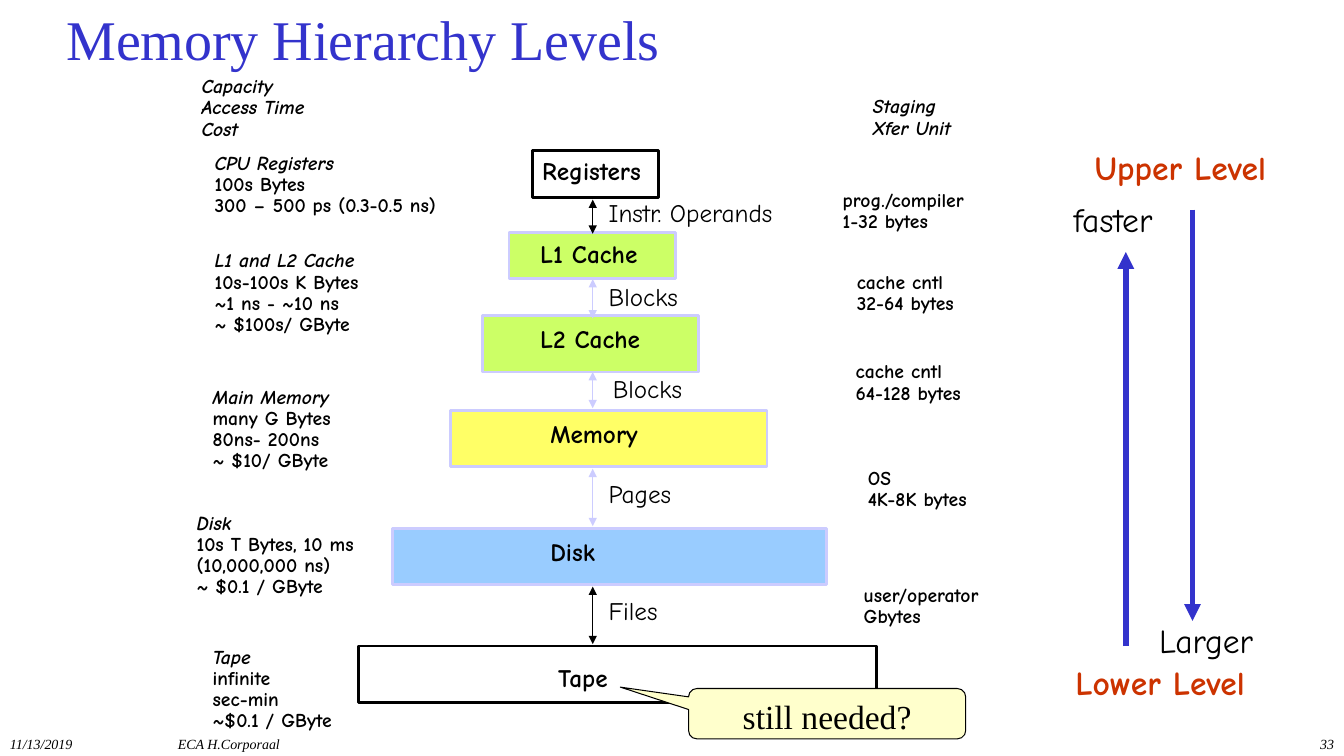
import pptx
import pptx.util
import pptx.dml.color
import pptx.enum.shapes
import pptx.enum.text
import pptx.oxml.ns
from lxml import etree

Pt = pptx.util.Pt
RGBColor = pptx.dml.color.RGBColor
Shape = pptx.enum.shapes.MSO_SHAPE
Align = pptx.enum.text.PP_ALIGN
Anchor = pptx.enum.text.MSO_ANCHOR
qn = pptx.oxml.ns.qn

BLACK = RGBColor(0x00, 0x00, 0x00)
BLUE = RGBColor(0x33, 0x33, 0xCC)
RED = RGBColor(0xCC, 0x33, 0x00)
LAVENDER = RGBColor(0xCC, 0xCC, 0xFF)
GREEN = RGBColor(0xCC, 0xFF, 0x66)
YELLOW = RGBColor(0xFF, 0xFF, 0x66)
SKY = RGBColor(0x99, 0xCC, 0xFF)
CREAM = RGBColor(0xFF, 0xFF, 0xCC)


class HierarchySlide:
    serif = "Times New Roman"
    comic = "Comic Neue"

    def __init__(self, deck):
        self.page = deck.slides.add_slide(deck.slide_layouts[6])

    def style(self, span, size, font, color, bold=False, italic=False):
        span.font.size = Pt(size)
        span.font.name = font
        span.font.color.rgb = color
        span.font.bold = bold
        span.font.italic = italic

    def serif_text(self, text, left, top, width, height, size, color=BLACK,
                   italic=False, align=Align.LEFT, anchor=Anchor.TOP):
        box = self.page.shapes.add_textbox(Pt(left), Pt(top), Pt(width), Pt(height))
        frame = box.text_frame
        frame.word_wrap = True
        frame.vertical_anchor = anchor
        para = frame.paragraphs[0]
        para.alignment = align
        span = para.add_run()
        span.text = text
        self.style(span, size, self.serif, color, italic=italic)

    def note(self, lines, left, top, width, size=14, color=BLACK, bold=True,
             italic_lines=0, spacing=0.9):
        height = 5 + len(lines) * size * 1.05
        box = self.page.shapes.add_textbox(Pt(left), Pt(top), Pt(width), Pt(height))
        frame = box.text_frame
        frame.word_wrap = False
        frame.margin_left = frame.margin_right = Pt(5)
        frame.margin_top = frame.margin_bottom = Pt(2.2)
        for index, line in enumerate(lines):
            para = frame.paragraphs[0] if index == 0 else frame.add_paragraph()
            para.line_spacing = spacing
            for part_index, part in enumerate(line.split("\n")):
                if part_index:
                    para.add_line_break()
                span = para.add_run()
                span.text = part
                self.style(span, size, self.comic, color, bold, index < italic_lines)

    def label(self, text, left, top, width, size=18, color=BLACK, bold=False):
        self.note([text], left, top, width, size, color, bold, spacing=0.85)

    def block(self, left, top, width, height, fill, line, weight=2, kind=Shape.RECTANGLE):
        block = self.page.shapes.add_shape(kind, Pt(left), Pt(top), Pt(width), Pt(height))
        block.shadow.inherit = False
        if fill is None:
            block.fill.background()
        else:
            block.fill.solid()
            block.fill.fore_color.rgb = fill
        block.line.color.rgb = line
        block.line.width = Pt(weight)
        return block

    def callout(self, text, left, top, width, height, adjustments):
        bubble = self.block(left, top, width, height, CREAM, BLACK, 0.75,
                            Shape.ROUNDED_RECTANGULAR_CALLOUT)
        for index, value in enumerate(adjustments):
            bubble.adjustments[index] = value
        bubble.text_frame.vertical_anchor = Anchor.TOP
        para = bubble.text_frame.paragraphs[0]
        para.alignment = Align.CENTER
        span = para.add_run()
        span.text = text
        self.style(span, 24, self.serif, BLACK)

    def arrow(self, x, start, end, color, weight=1, both=True):
        arrow = self.page.shapes.add_connector(
            pptx.enum.shapes.MSO_CONNECTOR.STRAIGHT, Pt(x), Pt(start), Pt(x), Pt(end))
        arrow.line.color.rgb = color
        arrow.line.width = Pt(weight)
        outline = arrow.line._get_or_add_ln()
        for tag in (["a:headEnd"] if both else []) + ["a:tailEnd"]:
            etree.SubElement(outline, qn(tag)).set("type", "triangle")
        etree.SubElement(arrow._element.spPr, qn("a:effectLst"))


LEVELS = [
    ("Registers", None, BLACK, (380.2, 107.3, 90, 33.8), (382.3, 112.3, 91.4)),
    ("L1 Cache", GREEN, LAVENDER, (363.6, 166.3, 118.8, 32.4), (380.9, 171.4, 89.3)),
    ("L2 Cache", GREEN, LAVENDER, (344.9, 225.4, 154.1, 40.3), (380.9, 231.8, 89.3)),
    ("Memory", YELLOW, LAVENDER, (321.8, 293, 226.1, 40.3), (388.1, 300.2, 79.2)),
    ("Disk", SKY, LAVENDER, (280.1, 377.3, 310.3, 40.3), (388.1, 384.5, 46.8)),
    ("Tape", None, BLACK, (256.3, 461.5, 370.1, 40.3), (393.8, 474.5, 59.8)),
]
TRANSFERS = [
    ("Instr. Operands", BLACK, 142.6, 167, (429.8, 141.8, 145.4)),
    ("Blocks", LAVENDER, 199.4, 227.5, (429.8, 202.3, 63.4)),
    ("Blocks", LAVENDER, 265.7, 291.6, (432.7, 267.8, 63.4)),
    ("Pages", LAVENDER, 334.8, 375.8, (429.8, 342.7, 56.9)),
    ("Files", BLACK, 419, 460.1, (429.8, 426.2, 49.7)),
]
NOTES = [
    (["Capacity", "Access Time", "Cost"], 139, 52.6, 162, 3),
    (["CPU Registers", "100s Bytes", "300 – 500 ps (0.3-0.5 ns)"], 148.3, 107.3, 191.5, 1),
    (["L1 and L2 Cache", "10s-100s K Bytes", "~1 ns - ~10 ns", "~ $100s/ GByte"],
     148.3, 177.1, 134.6, 1),
    (["Main Memory", "many G Bytes", "80ns- 200ns", "~ $10/ GByte"], 146.9, 274.3, 105.1, 1),
    (["Disk", "10s T Bytes, 10 ms \n(10,000,000 ns)", "~ $0.1 / GByte"],
     135.4, 364.3, 154.8, 1),
    (["Tape", "infinite", "sec-min", "~$0.1 / GByte"], 146.9, 460.1, 112.3, 1),
    (["Staging", "Xfer Unit"], 618.5, 67, 76.3, 2),
    (["prog./compiler", "1-32 bytes"], 596.9, 133.9, 108.7, 0),
    (["cache cntl", "32-64 bytes"], 607, 192.2, 96.5, 0),
    (["cache cntl", "64-128 bytes"], 606.2, 256.3, 104.4, 0),
    (["OS", "4K-8K bytes"], 614.9, 332.6, 96.5, 0),
    (["user/operator", "Gbytes"], 612, 416.2, 105.1, 0),
]
ENDS = [
    ("Upper Level", 776.9, 107.3, 148.3, RED, True),
    ("Lower Level", 763.2, 475.2, 146.9, RED, True),
    ("faster", 761.8, 144, 82.8, BLACK, False),
    ("Larger", 823, 445, 85, BLACK, False),
]


def main():
    deck = pptx.Presentation()
    deck.slide_width = Pt(960)
    deck.slide_height = Pt(540)
    slide = HierarchySlide(deck)

    slide.serif_text("Memory Hierarchy Levels", 40.3, 12.2, 895.7, 30.2, 40, BLUE,
                     anchor=Anchor.MIDDLE)
    for text, left, width, align in [
        ("11/13/2019", 0, 120, Align.LEFT),
        ("ECA H.Corporaal", 120, 304, Align.LEFT),
        ("33", 760, 200, Align.RIGHT),
    ]:
        slide.serif_text(text, left, 522, width, 18, 10, italic=True, align=align)

    for name, fill, line, area, place in LEVELS:
        slide.block(*area, fill, line)
        slide.label(name, *place, bold=True)
    for name, color, start, end, place in TRANSFERS:
        slide.arrow(423.4, start, end, color)
        slide.label(name, *place)
    for lines, left, top, width, italic_lines in NOTES:
        slide.note(lines, left, top, width, italic_lines=italic_lines)
    for text, left, top, width, color, bold in ENDS:
        slide.label(text, left, top, width, 24, color, bold)
    slide.arrow(804.2, 461.5, 180, BLUE, 4, both=False)
    slide.arrow(851.8, 149.8, 443.5, BLUE, 4, both=False)
    slide.callout("still needed?", 491.8, 491.8, 198, 36, (-0.746, -0.528, 0.167))

    deck.save("out.pptx")


if __name__ == "__main__":
    main()
